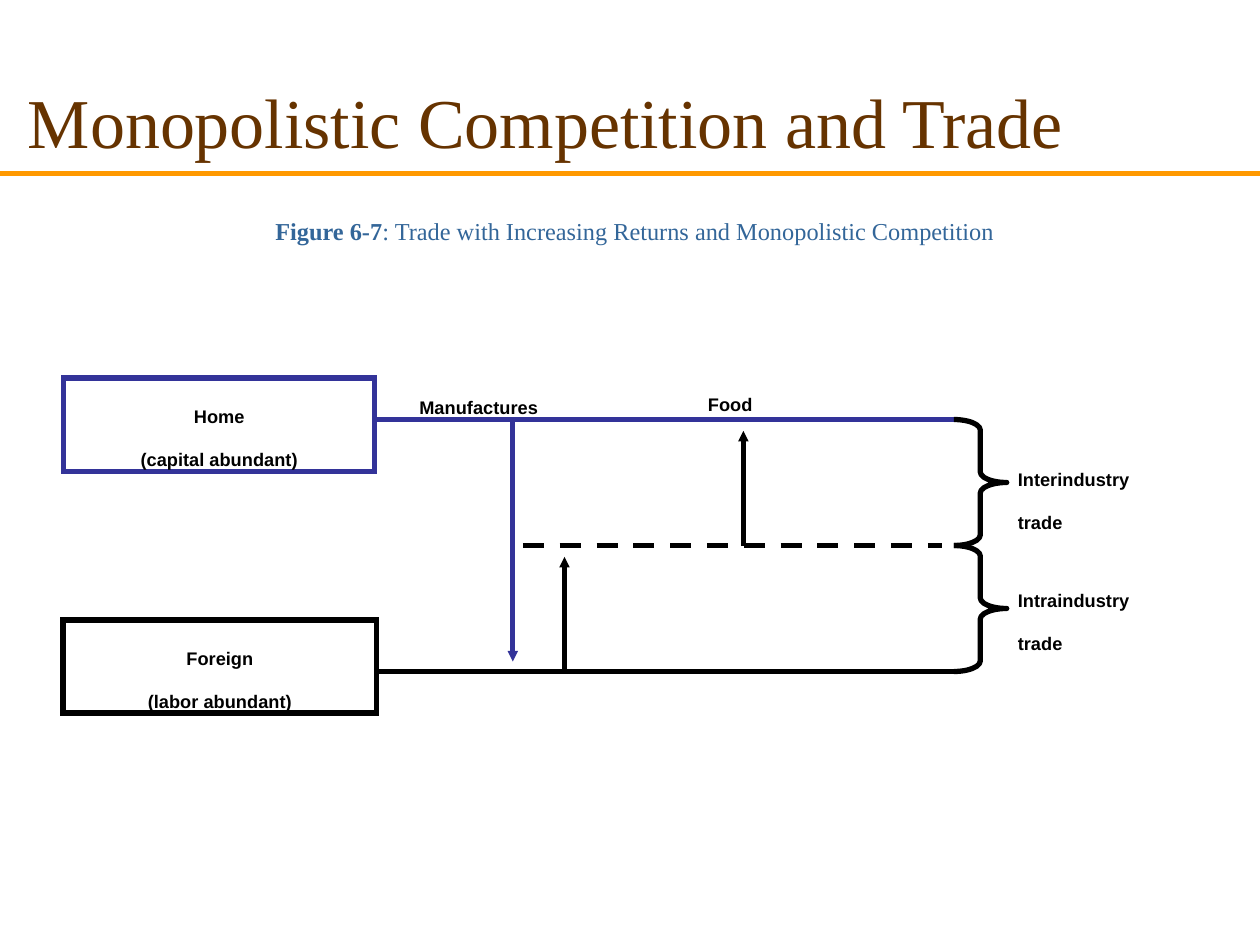
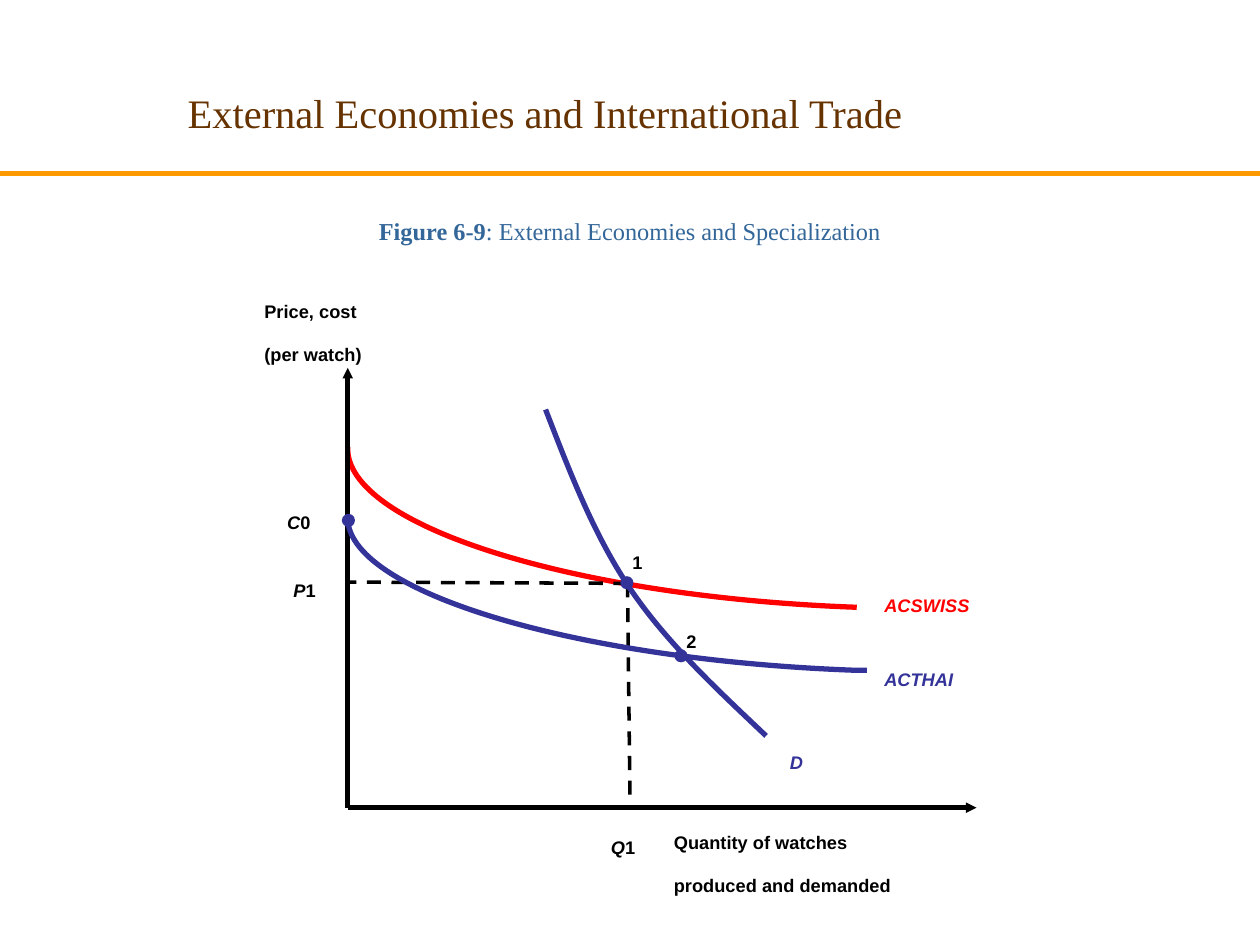
import pptx
import pptx.dml.color
import pptx.enum.dml
import pptx.enum.shapes
import pptx.enum.text
import pptx.util
from dataclasses import dataclass
from lxml import etree

SHAPE = pptx.enum.shapes.MSO_SHAPE
ALIGN = pptx.enum.text.PP_ALIGN
ANCHOR = pptx.enum.text.MSO_ANCHOR
A = "{http://schemas.openxmlformats.org/drawingml/2006/main}"


@dataclass(frozen=True)
class Theme:
    title: str = "663300"
    rule: str = "FF9900"
    caption: str = "336699"
    ink: str = "000000"
    blue: str = "333399"
    red: str = "FF0101"
    serif: str = "Times New Roman"
    sans: str = "Arial"
    caption_size: float = 13.9
    label_size: float = 10.4
    line_gap: float = 12.2
    heavy: float = 3
    light: float = 2


class Deck:
    """Draws on a grid of 100 columns by 75 rows."""

    COLS, ROWS = 100, 75
    TEXT_TOP = 2.15

    def __init__(self, theme):
        self.t = theme
        self.prs = pptx.Presentation()
        self.prs.slide_width = pptx.util.Inches(10)
        self.prs.slide_height = pptx.util.Inches(7.5)
        self.s = None

    # Grid and formatting helpers
    def x(self, col):
        return round(self.prs.slide_width * col / self.COLS)

    def y(self, row):
        return round(self.prs.slide_height * row / self.ROWS)

    def box(self, left, top, width, height):
        return self.x(left), self.y(top), self.x(width), self.y(height)

    def rgb(self, color):
        return pptx.dml.color.RGBColor.from_string(color)

    def stroke(self, line, color, weight):
        line.color.rgb = self.rgb(color)
        line.width = pptx.util.Pt(weight)

    def run(self, p, text, font, size, color, bold=False, italic=False):
        r = p.add_run()
        r.text = text
        r.font.name, r.font.size = font, pptx.util.Pt(size)
        r.font.bold, r.font.italic = bold, italic
        r.font.color.rgb = self.rgb(color)

    def frame(self, sp, anchor, side=0, top=0, bottom=0, wrap=True):
        tf = sp.text_frame
        tf.auto_size = pptx.enum.text.MSO_AUTO_SIZE.NONE
        tf.word_wrap = wrap
        tf.vertical_anchor = anchor
        tf.margin_left = tf.margin_right = self.x(side)
        tf.margin_top, tf.margin_bottom = self.y(top), self.y(bottom)
        return tf

    def lines(self, tf, lines, color, align):
        """Each line is a string or a list of (text, italic) runs."""
        for i, line in enumerate(lines):
            p = tf.add_paragraph() if i else tf.paragraphs[0]
            p.alignment = align
            if i:
                p.space_before = pptx.util.Pt(self.t.line_gap)
            for text, italic in [(line, False)] if isinstance(line, str) else line:
                self.run(p, text, self.t.sans, self.t.label_size, color, True, italic)

    # Slide furniture
    def slide(self, title, size, title_top, figure, caption, caption_width=100):
        t = self.t
        self.s = self.prs.slides.add_slide(self.prs.slide_layouts[5])
        sp = self.s.shapes.title
        sp.left, sp.top, sp.width, sp.height = self.box(0.8, title_top, 85, 12.5)
        p = self.frame(sp, ANCHOR.MIDDLE).paragraphs[0]
        p.alignment = ALIGN.CENTER
        self.run(p, title, t.serif, size, t.title)
        self.line((0, 13.8), (100, 13.8), t.rule)
        sp = self.s.shapes.add_textbox(*self.box(0, 14.2, caption_width, 5.8))
        p = self.frame(sp, ANCHOR.BOTTOM, bottom=0.5).paragraphs[0]
        p.alignment = ALIGN.CENTER
        self.run(p, figure, t.serif, t.caption_size, t.caption, True)
        self.run(p, ": " + caption, t.serif, t.caption_size, t.caption)

    # Elements
    def label(self, left, top, width, *lines, color=None):
        sp = self.s.shapes.add_textbox(*self.box(left, top, width, 1 + 3 * len(lines)))
        tf = self.frame(sp, ANCHOR.TOP, side=1, top=self.TEXT_TOP, wrap=False)
        self.lines(tf, lines, color or self.t.ink, ALIGN.LEFT)

    def shape(self, kind, left, top, width, height, color, weight, filled=False):
        sp = self.s.shapes.add_shape(kind, *self.box(left, top, width, height))
        sp.shadow.inherit = False
        if filled:
            sp.fill.solid()
            sp.fill.fore_color.rgb = self.rgb(color)
        else:
            sp.fill.background()
        self.stroke(sp.line, color, weight)
        return sp

    def country(self, left, top, width, color, *lines):
        sp = self.shape(SHAPE.RECTANGLE, left, top, width, 7.4, color, self.t.heavy)
        etree.SubElement(sp.line._get_or_add_ln(), A + "miter", lim="800000")
        tf = self.frame(sp, ANCHOR.TOP, top=self.TEXT_TOP)
        self.lines(tf, lines, self.t.ink, ALIGN.CENTER)

    def brace(self, left, top, width, height):
        sp = self.shape(SHAPE.RIGHT_BRACE, left, top, width, height, self.t.ink, self.t.heavy)
        sp.adjustments[0], sp.adjustments[1] = 0.2, 0.5

    def dot(self, col, row, size=0.9):
        self.shape(SHAPE.OVAL, col - size / 2, row - size / 2, size, size,
                   self.t.blue, 1, filled=True)

    def line(self, start, end, color=None, weight=None, dash=False, arrow=False):
        c = self.s.shapes.add_connector(
            pptx.enum.shapes.MSO_CONNECTOR.STRAIGHT,
            self.x(start[0]), self.y(start[1]), self.x(end[0]), self.y(end[1]))
        self.stroke(c.line, color or self.t.ink, weight or self.t.heavy)
        if dash:
            c.line.dash_style = pptx.enum.dml.MSO_LINE.DASH
        if arrow:
            etree.SubElement(c.line._get_or_add_ln(), A + "tailEnd",
                             type="triangle", w="sm", len="sm")
        etree.SubElement(c._element.spPr, A + "effectLst")

    def curve(self, *points, color):
        """Takes a start, then two controls and an end for each cubic segment."""
        emu = [(self.x(col), self.y(row)) for col, row in points]
        fb = self.s.shapes.build_freeform(*emu[0])
        fb.add_line_segments(emu[1:], close=False)
        sp = fb.convert_to_shape()
        # Merge each three straight steps into one cubic step
        steps = list(sp._element.iter(A + "lnTo"))
        for i in range(0, len(steps), 3):
            cubic = etree.Element(A + "cubicBezTo")
            steps[i].addprevious(cubic)
            for step in steps[i:i + 3]:
                cubic.append(step[0])
                step.getparent().remove(step)
        sp.shadow.inherit = False
        sp.fill.background()
        self.stroke(sp.line, color, self.t.heavy)


def trade_pattern(d):
    t = d.t
    d.slide("Monopolistic Competition and Trade", 40, 3.3, "Figure 6-7",
            "Trade with Increasing Returns and Monopolistic Competition", 100.8)
    home, middle, foreign = 33.3, 43.3, 53.3
    split = 75.7

    # Countries and their trade lines
    d.country(5.05, 30, 24.7, t.blue, "Home", "(capital abundant)")
    d.line((29.8, home), (split, home), t.blue)
    d.country(5, 49.2, 24.9, t.ink, "Foreign", "(labor abundant)")
    d.line((29.8, foreign), (split, foreign))

    # Flows of goods
    d.line((40.7, home), (40.7, foreign - 0.8), t.blue, arrow=True)
    d.label(32.3, 29.3, 18.3, "Manufactures")
    d.label(55.2, 29.1, 8.1, "Food")
    d.line((41.5, middle), (74.8, middle), dash=True)
    for col, start in ((59, middle), (44.8, foreign)):
        d.line((col, start), (col, start - 9.1), arrow=True)

    # Kinds of trade
    for kind, top, text_top in (("Interindustry", home, 35),
                                ("Intraindustry", middle, 44.6)):
        d.brace(split, top, 4.2, 10)
        d.label(79.8, text_top, 17.3, kind, "trade")


def external_economies(d):
    t = d.t
    d.slide("External Economies and International Trade", 23.1, 2.7,
            "Figure 6-9", "External Economies and Specialization")
    origin = (27.6, 64.1)
    point_1, point_2, start_cost = (49.75, 46.25), (54.05, 52.05), (27.65, 41.3)

    # Swiss average cost
    d.curve((68, 48.2), (45.5, 47.4), (27.4, 41.7), (27.6, 35.5), color=t.red)
    d.label(69.2, 45, 16, [("AC", True), ("SWISS", True)], color=t.red)

    # Guides to the first equilibrium
    d.line((49.8, 46.3), (27.4, 46.2), weight=t.light, dash=True)
    d.line((49.8, 46.3), (50, 63.5), weight=t.light, dash=True)

    # Axes
    d.line(origin, (77.5, 64.1), arrow=True)
    d.line(origin, (27.6, 29.2), arrow=True)
    d.label(20, 21.7, 16.7, "Price, cost", "(per watch)")
    d.label(52.5, 63.8, 31.7, "Quantity of watches", "produced and demanded")

    # Thai average cost
    d.curve((68.8, 53.2), (68.6, 53.2), (68.3, 53.2), (68, 53.2),
            (45.5, 52.4), (27.4, 46.9), (27.6, 41), color=t.blue)
    d.label(69.2, 50.9, 14.3, [("AC", True), ("THAI", True)], color=t.blue)

    # Demand
    d.curve((43.3, 32.5), (45.2, 37.4), (47.1, 42.4), (50, 46.7),
            (52.9, 51), (56.9, 54.7), (60.8, 58.4), color=t.blue)
    d.label(61.7, 57.5, 3.8, [("D", True)], color=t.blue)

    # Marked points and values
    for point in (point_1, point_2, start_cost):
        d.dot(*point)
    d.label(49.2, 41.6, 3.4, "1")
    d.label(53.5, 47.9, 3.3, "2")
    for letter, digit, col, row, width in (("C", "0", 21.8, 38.4, 8.2),
                                           ("P", "1", 22.3, 43.8, 4.6),
                                           ("Q", "1", 47.5, 64.2, 4.9)):
        d.label(col, row, width, [(letter, True), (digit, False)])


def main():
    d = Deck(Theme())
    trade_pattern(d)
    external_economies(d)
    d.prs.save("out.pptx")


if __name__ == "__main__":
    main()
